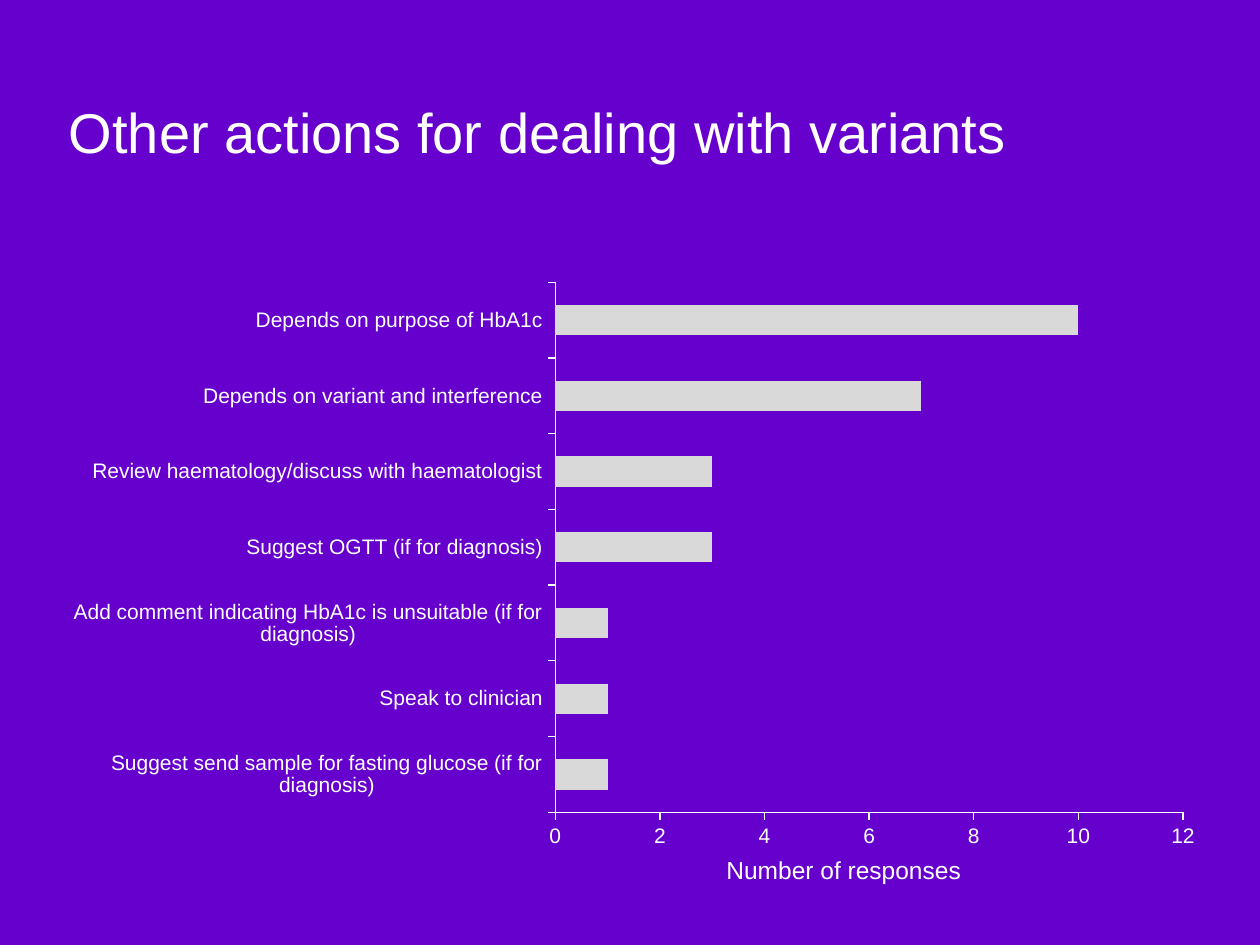
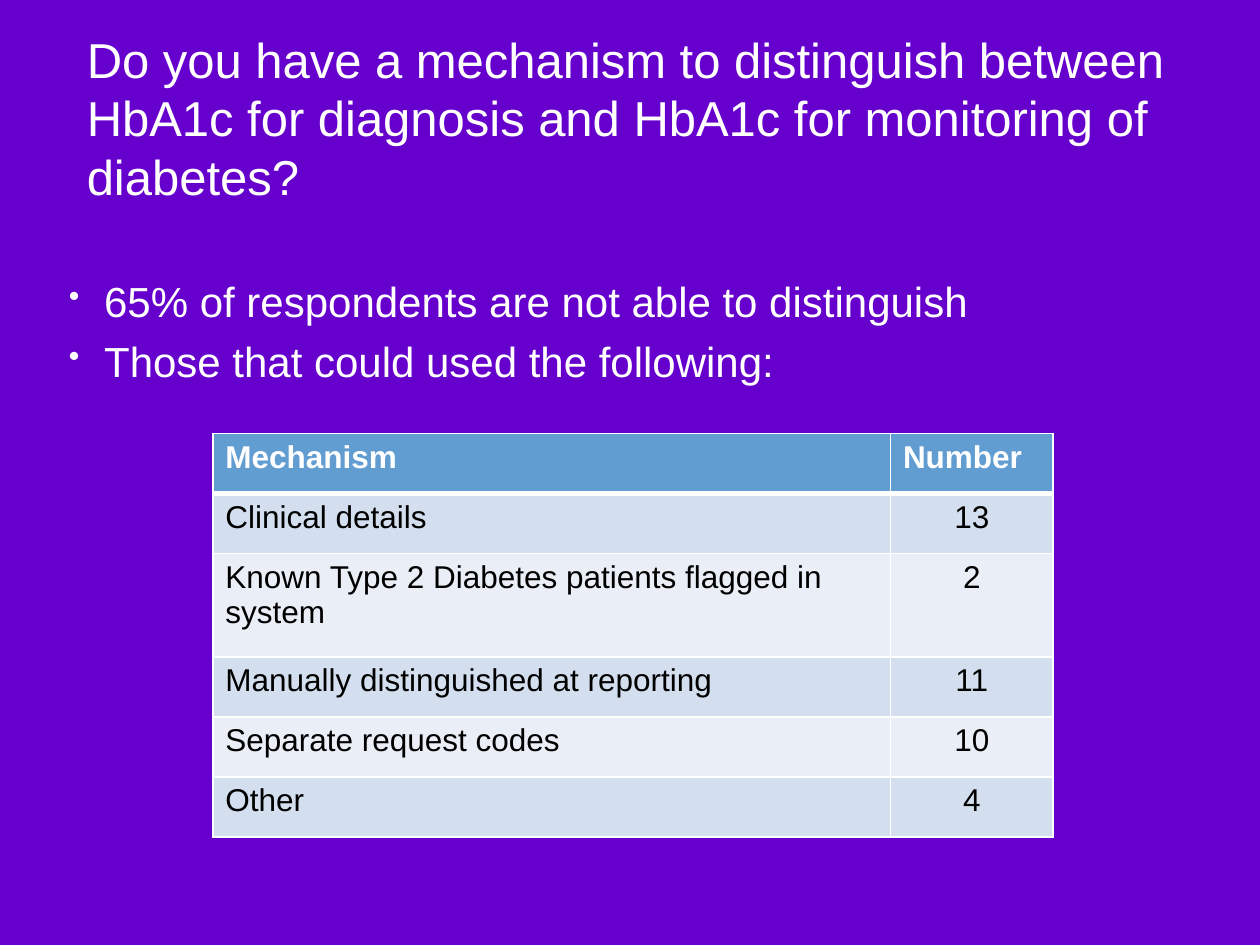
from lxml import etree
from pptx import Presentation
from pptx import util as u
from pptx.chart.data import CategoryChartData
from pptx.dml.color import RGBColor
from pptx.enum import chart as charts, text
from pptx.oxml import parse_xml
from pptx.oxml.ns import nsdecls, qn

COLOURS = {
    "background": "6600CC",
    "light": "FFFFFF",
    "dark": "000000",
    "bar": "D9D9D9",
    "header": "629DD1",
    "odd_row": "D3DFEE",
    "even_row": "EAEFF7",
}
FONT = "Arial"

RESPONSES = [
    ("Suggest send sample for fasting glucose (if for diagnosis)", 1),
    ("Speak to clinician", 1),
    ("Add comment indicating HbA1c is unsuitable (if for diagnosis)", 1),
    ("Suggest OGTT (if for diagnosis)", 3),
    ("Review haematology/discuss with haematologist", 3),
    ("Depends on variant and interference", 7),
    ("Depends on purpose of HbA1c", 10),
]
MECHANISMS = [
    ("Mechanism", "Number"),
    ("Clinical details", "13"),
    ("Known Type 2 Diabetes patients flagged in system", "2"),
    ("Manually distinguished at reporting", "11"),
    ("Separate request codes", "10"),
    ("Other", "4"),
]


def colour(name):
    return RGBColor.from_string(COLOURS[name])


def apply(target, values):
    for name, value in values.items():
        setattr(target, name, value)


def style_font(font, size, shade="light", bold=False):
    apply(font, {"name": FONT, "size": u.Pt(size), "bold": bold})
    font.color.rgb = colour(shade)


def place(*lengths):
    return [u.Cm(length) for length in lengths]


def add_page(deck):
    page = deck.slides.add_slide(deck.slide_layouts[6])
    page.background.fill.solid()
    page.background.fill.fore_color.rgb = colour("background")
    return page


def add_text(page, position, lines, size, frame_format, para_format):
    box = page.shapes.add_textbox(*place(*position))
    frame = box.text_frame
    apply(frame, {"word_wrap": True, **frame_format})
    for index, line in enumerate(lines):
        para = frame.paragraphs[0] if index == 0 else frame.add_paragraph()
        apply(para, para_format)
        span = para.add_run()
        span.text = line
        style_font(span.font, size)
    return box


def add_title(page, position, title, size):
    add_text(page, position, [title], size,
             {"vertical_anchor": text.MSO_ANCHOR.BOTTOM}, {})


def add_bullets(page, position, lines):
    box = add_text(page, position, lines, 24,
                   {"vertical_anchor": text.MSO_ANCHOR.MIDDLE,
                    "margin_bottom": u.Cm(1.85)},
                   {"space_before": u.Pt(5.5)})
    for para in box.text_frame.paragraphs:
        props = para._p.get_or_add_pPr()
        props.set("marL", str(u.Cm(0.76)))
        props.set("indent", str(u.Cm(-0.71)))
        etree.SubElement(props, qn("a:buSzPct")).set("val", "75000")
        etree.SubElement(props, qn("a:buChar")).set("char", "•")


def set_plot_area(chart, **fractions):
    plot_area = chart._chartSpace.chart.plotArea
    for layout in plot_area.findall(qn("c:layout")):
        plot_area.remove(layout)
    values = "".join(f'<c:{name} val="{value}"/>' for name, value in fractions.items())
    plot_area.insert(0, parse_xml(
        f'<c:layout {nsdecls("c")}><c:manualLayout><c:layoutTarget val="inner"/>'
        f'<c:xMode val="edge"/><c:yMode val="edge"/>{values}'
        f'</c:manualLayout></c:layout>'))


def add_bar_chart(page, position, responses):
    data = CategoryChartData()
    data.categories = [action for action, count in responses]
    data.add_series("Series 1", [count for action, count in responses])
    chart = page.shapes.add_chart(
        charts.XL_CHART_TYPE.BAR_CLUSTERED, *place(*position), data).chart
    apply(chart, {"has_legend": False, "has_title": False})
    style_font(chart.font, 12)
    for axis in (chart.category_axis, chart.value_axis):
        apply(axis, {"has_major_gridlines": False,
                     "major_tick_mark": charts.XL_TICK_MARK.OUTSIDE,
                     "minor_tick_mark": charts.XL_TICK_MARK.NONE})
        style_font(axis.tick_labels.font, 12)
        axis.format.line.color.rgb = colour("light")
        axis.format.line.width = u.Pt(0.75)
    apply(chart.value_axis, {"minimum_scale": 0, "maximum_scale": 12, "major_unit": 2})
    plot = chart.plots[0]
    apply(plot, {"gap_width": 150, "vary_by_categories": False})
    bars = plot.series[0].format.fill
    bars.solid()
    bars.fore_color.rgb = colour("bar")
    set_plot_area(chart, x=0.43, y=0.03, w=0.55, h=0.89)


def set_borders(cell, widths):
    props = cell._tc.get_or_add_tcPr()
    for index, (side, width) in enumerate(widths.items()):
        props.insert(index, parse_xml(
            f'<a:ln{side} {nsdecls("a")} w="{u.Pt(width)}"><a:solidFill>'
            f'<a:srgbClr val="{COLOURS["light"]}"/></a:solidFill></a:ln{side}>'))


def add_table(page, position, rows, widths, heights):
    table = page.shapes.add_table(len(rows), len(widths), *place(*position)).table
    for column, width in zip(table.columns, widths):
        column.width = u.Cm(width)
    for index, (row, height, values) in enumerate(zip(table.rows, heights, rows)):
        row.height = u.Cm(height)
        header = index == 0
        fill = "header" if header else "odd_row" if index % 2 else "even_row"
        for number, (cell, value) in enumerate(zip(row.cells, values)):
            cell.fill.solid()
            cell.fill.fore_color.rgb = colour(fill)
            set_borders(cell, {"L": 1, "R": 1, "T": 3 if index == 1 else 1,
                               "B": 3 if header else 1})
            para = cell.text_frame.paragraphs[0]
            if number and not header:
                para.alignment = text.PP_ALIGN.CENTER
            span = para.add_run()
            span.text = value
            style_font(span.font, 18, "light" if header else "dark", header)


def build_actions(deck):
    page = add_page(deck)
    add_title(page, (1.14, 0.91, 20.96, 2.54), "Other actions for dealing with variants", 32)
    add_bar_chart(page, (1.3, 5.33, 23.01, 12.01), RESPONSES)
    add_text(page, (13.11, 17.12, 7.8, 0.86), ["Number of responses"], 14, {},
             {"alignment": text.PP_ALIGN.CENTER})


def build_mechanisms(deck):
    page = add_page(deck)
    add_bullets(page, (1.09, 4.11, 21.21, 6.83),
                ["65% of respondents are not able to distinguish",
                 "Those that could used the following:"])
    add_title(page, (1.5, 1.73, 22.4, 2.54),
              "Do you have a mechanism to distinguish between HbA1c for diagnosis "
              "and HbA1c for monitoring of diabetes?", 28)
    add_table(page, (4.29, 8.74, 16.94, 8.13), MECHANISMS, (13.66, 3.28),
              [2.08 if index == 2 else 1.21 for index in range(len(MECHANISMS))])


def main():
    deck = Presentation()
    apply(deck, {"slide_width": u.Cm(25.4), "slide_height": u.Cm(19.05)})
    build_actions(deck)
    build_mechanisms(deck)
    deck.save("out.pptx")


if __name__ == "__main__":
    main()
